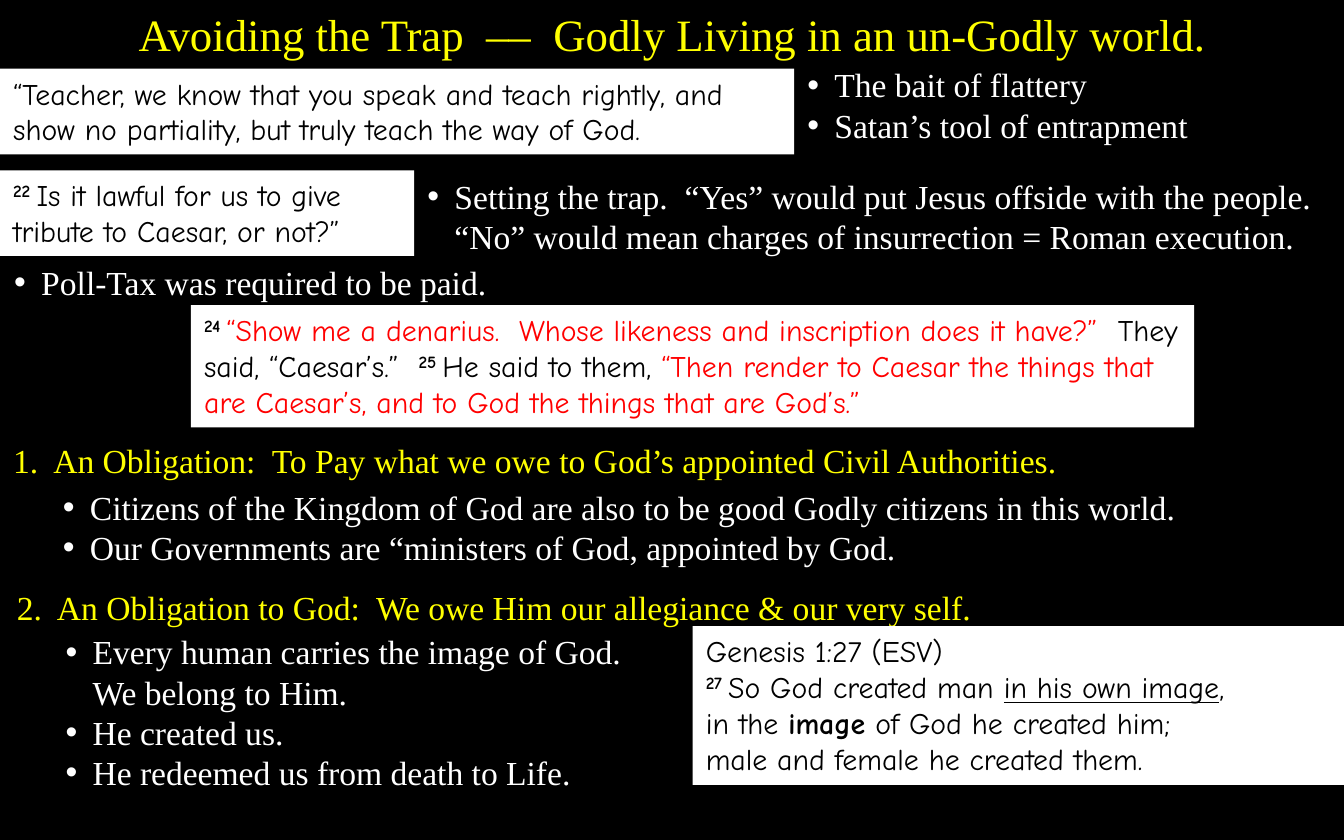
"""Build the "Avoiding the Trap" sermon slide with its Scripture panels and points."""
import pptx
import pptx.dml.color
import pptx.enum.shapes
import pptx.enum.text
import pptx.util
from lxml import etree

Cm, Pt, RGB = pptx.util.Cm, pptx.util.Pt, pptx.dml.color.RGBColor
SERIF = {"name": "Times New Roman", "size": Pt(18)}
VERSE = {"name": "Comic Neue", "size": Pt(16)}
BLACK, WHITE, YELLOW, RED = (RGB.from_string(c) for c in ("000000", "FFFFFF", "FFFF00", "FF0000"))
THEME = {
    "title": (YELLOW, {**SERIF, "size": Pt(24)}),
    "heading": (YELLOW, SERIF),
    "bullet": (WHITE, SERIF),
    "verse": (BLACK, VERSE),
    "jesus": (RED, VERSE),
    "strong": (BLACK, {**VERSE, "bold": True}),
    "number": (BLACK, {**VERSE, "bold": True}),
    "underlined": (BLACK, {**VERSE, "underline": True}),
}
INDENT = Cm(0.51)

TITLE = [[("title", "Avoiding the Trap  ––  Godly Living in an un-Godly world.")]]
FLATTERY = [[("verse", "“Teacher, we know that you speak and teach rightly, and show no partiality, "
                       "but truly teach the way of God.")]]
BAIT = [[("bullet", "The bait of flattery")], [("bullet", "Satan’s tool of entrapment")]]
QUESTION = [[("number", "22 "), ("verse", "Is it lawful for us to give tribute to Caesar, or not?”")]]
TRAP = [[("bullet", "Setting the trap.  “Yes” would put Jesus offside with the people.  "
                    "“No” would mean charges of insurrection = Roman execution.")]]
TAX = [[("bullet", "Poll-Tax was required to be paid.")]]
ANSWER = [[
    ("number", "24 "),
    ("jesus", "“Show me a denarius.  Whose likeness and inscription does it have?”  "),
    ("verse", "They said, “Caesar’s.”  "),
    ("number", "25 "),
    ("verse", "He said to them, "),
    ("jesus", "“Then render to Caesar the things that are Caesar’s, "
              "and to God the things that are God’s.”"),
]]
CIVIL = [[("heading", "1.  An Obligation:  To Pay what we owe to God’s appointed Civil Authorities.")]]
CITIZENS = [
    [("bullet", "Citizens of the Kingdom of God are also to be good Godly citizens in this world.")],
    [("bullet", "Our Governments are “ministers of God, appointed by God.")],
]
ALLEGIANCE = [[("heading", "2.  An Obligation to God:  We owe Him our allegiance & our very self.")]]
IMAGE = [
    [("bullet", "Every human carries the image of God.\nWe belong to Him.")],
    [("bullet", "He created us.")],
    [("bullet", "He redeemed us from death to Life.")],
]
GENESIS = [
    [("verse", "Genesis 1:27 (ESV)")],
    [("number", "27 "), ("verse", "So God created man "), ("underlined", "in his own image"), ("verse", ",")],
    [("verse", "in the "), ("strong", "image"), ("verse", " of God he created him;")],
    [("verse", "male and female he created them.")],
]
BOXES = [
    ("text", 0, 0, 25.4, 1.27, TITLE),
    ("panel", 0, 1.3, 15.01, 1.62, FLATTERY),
    ("text", 15.01, 1.09, 9.3, 1.8, BAIT),
    ("panel", 0, 3.22, 7.83, 1.62, QUESTION),
    ("text", 7.83, 3.2, 17.57, 1.8, TRAP),
    ("text", 0.02, 4.82, 25.38, 1.02, TAX),
    ("panel", 3.61, 5.77, 18.96, 2.31, ANSWER),
    ("text", 0, 8.2, 20.75, 1.02, CIVIL),
    ("text", 0.94, 9.08, 24.46, 1.8, CITIZENS),
    ("text", 0.07, 10.98, 25.33, 1.02, ALLEGIANCE),
    ("text", 0.99, 11.81, 11.56, 3.33, IMAGE),
    ("panel", 13.09, 11.84, 12.31, 3, GENESIS),
]


def add_bullet(p):
    pPr = p._p.get_or_add_pPr()
    pPr.set("marL", str(INDENT))
    pPr.set("indent", str(-INDENT))
    for tag, key, value in (("buFont", "typeface", "Arial"), ("buChar", "char", "•")):
        etree.SubElement(pPr, pptx.oxml.ns.qn(f"a:{tag}")).set(key, value)


def add_text(p, style, text):
    color, formats = THEME[style]
    for i, line in enumerate(text.split("\n")):
        if i:
            p.add_line_break()
        r = p.add_run()
        r.text = line
        r.font.color.rgb = color
        for name, value in formats.items():
            setattr(r.font, name, value)
        if style == "number":
            r._r.get_or_add_rPr().set("baseline", "30000")


prs = pptx.Presentation()
prs.slide_width, prs.slide_height = Cm(25.4), Cm(15.88)
s = prs.slides.add_slide(prs.slide_layouts[6])
s.background.fill.solid()
s.background.fill.fore_color.rgb = BLACK

for kind, left, top, width, height, paragraphs in BOXES:
    area = [Cm(v) for v in (left, top, width, height)]
    if kind == "panel":
        sp = s.shapes.add_shape(pptx.enum.shapes.MSO_SHAPE.RECTANGLE, *area)
        sp.shadow.inherit = False
        sp.fill.solid()
        sp.fill.fore_color.rgb = WHITE
        sp.line.fill.background()
    else:
        sp = s.shapes.add_textbox(*area)
    tf = sp.text_frame
    tf.word_wrap = True
    tf.auto_size = pptx.enum.text.MSO_AUTO_SIZE.SHAPE_TO_FIT_TEXT
    tf.vertical_anchor = pptx.enum.text.MSO_ANCHOR.TOP
    for i, runs in enumerate(paragraphs):
        p = tf.add_paragraph() if i else tf.paragraphs[0]
        centred = runs[0][0] == "title"
        p.alignment = pptx.enum.text.PP_ALIGN.CENTER if centred else pptx.enum.text.PP_ALIGN.LEFT
        if runs[0][0] == "bullet":
            add_bullet(p)
        for style, text in runs:
            add_text(p, style, text)

prs.save("out.pptx")
